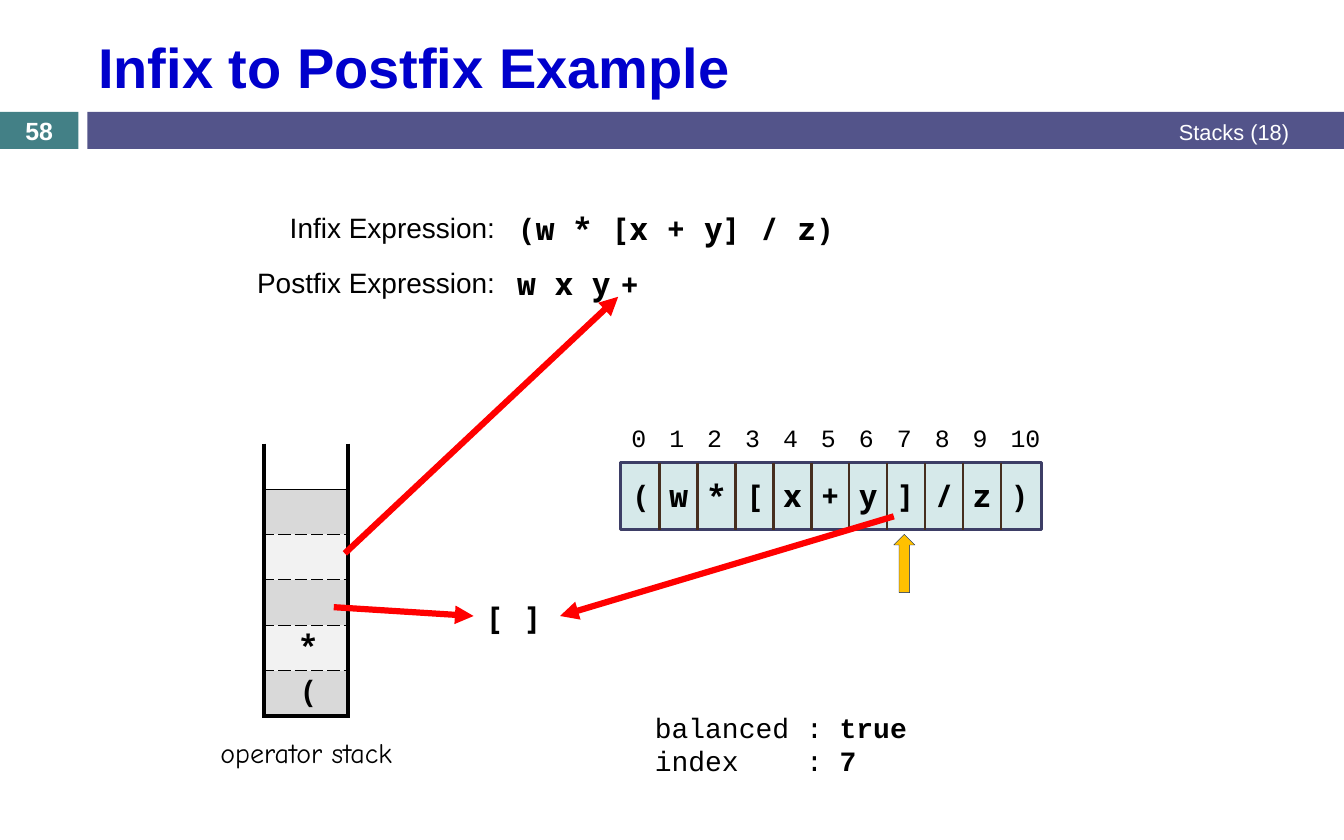
from lxml import etree
from pptx import Presentation
from pptx import util as u
from pptx.dml.color import RGBColor
from pptx.enum import shapes, text
from pptx.oxml import ns

Cm, Pt = u.Cm, u.Pt
COLORS = {
    "title": "0000CC", "bar": "53548A", "number": "438086",
    "white": "FFFFFF", "black": "000000",
    "light": "F2F2F2", "dark": "D9D9D9",
    "array": "D6E9EA", "array_line": "3D3E66", "divider": "462E1F",
    "marker": "FFC000", "marker_line": "002060", "move": "FF0000",
}
SANS, CODE, MONO, HAND = "Arial", "Noto Sans Mono", "Courier New", "Comic Neue"
CHAR_WIDTH, CHAR_HEIGHT = 0.86, 1.12


def rgb(name):
    return RGBColor.from_string(COLORS[name])


def add_xml(parent, tag, **attributes):
    return etree.SubElement(parent, ns.qn(tag), attributes)


def style_run(run, size, font, color="black", bold=False):
    run.font.size, run.font.name, run.font.bold = Pt(size), font, bold
    run.font.color.rgb = rgb(color)


def add_text(slide, box, content, size, font, color="black", bold=False,
             align=text.PP_ALIGN.LEFT, anchor=text.MSO_ANCHOR.TOP):
    shape = slide.shapes.add_textbox(*map(Cm, box))
    frame = shape.text_frame
    frame.word_wrap = True
    frame.vertical_anchor = anchor
    frame.text = content
    for paragraph in frame.paragraphs:
        paragraph.alignment = align
        for run in paragraph.runs:
            style_run(run, size, font, color, bold)
    return shape


def add_char(slide, left, top, char):
    add_text(slide, (left, top, CHAR_WIDTH, CHAR_HEIGHT), char, 20, CODE, bold=True)


def add_block(slide, kind, box, fill, line=None, width=0):
    shape = slide.shapes.add_shape(kind, *map(Cm, box))
    shape.shadow.inherit = False
    shape.fill.solid()
    shape.fill.fore_color.rgb = rgb(fill)
    if line:
        shape.line.color.rgb = rgb(line)
        shape.line.width = Pt(width)
    else:
        shape.line.fill.background()
    return shape


def add_line(slide, start, end, color, width, arrow=False):
    line = slide.shapes.add_connector(
        shapes.MSO_CONNECTOR.STRAIGHT, *map(Cm, (*start, *end)))
    line.line.color.rgb = rgb(color)
    line.line.width = Pt(width)
    if arrow:
        add_xml(line.line._get_or_add_ln(), "a:tailEnd", type="triangle")
    add_xml(line._element.spPr, "a:effectLst")


def set_border(cell, index, side, width, dash="solid"):
    """Draw one cell edge; a width of 0 hides it."""
    border = etree.Element(ns.qn("a:ln" + side), {"w": str(Pt(width))})
    if width:
        fill = add_xml(border, "a:solidFill")
        add_xml(fill, "a:srgbClr", val=COLORS["black"])
        add_xml(border, "a:prstDash", val=dash)
    else:
        add_xml(border, "a:noFill")
    cell._tc.get_or_add_tcPr().insert(index, border)


def add_header(slide, left, top, width, height):
    middle = text.MSO_ANCHOR.MIDDLE
    number_box = (left, top, 1.78, height)
    bar_left = left + 1.98
    rectangle = shapes.MSO_SHAPE.RECTANGLE
    add_block(slide, rectangle, number_box, "number")
    add_block(slide, rectangle, (bar_left, top, width - 1.98, height), "bar")
    add_text(slide, (bar_left, top - 2.06, 27.18, 2.03), "Infix to Postfix Example",
             36, SANS, "title", True, anchor=middle)
    add_text(slide, (left + 11.43, top + 0.03, 18.06, height), "Stacks (18)",
             14, SANS, "white", align=text.PP_ALIGN.RIGHT, anchor=middle)
    add_text(slide, number_box, "58", 16, SANS, "white", True,
             text.PP_ALIGN.CENTER, middle)


def add_expressions(slide, left, top, label_width, value_width):
    rows = [("Infix Expression:", "(w * [x + y] / z)"),
            ("Postfix Expression:", "w x y")]
    value_left = left + label_width
    for row, (label, value) in enumerate(rows):
        y = top + 1.25 * row
        add_text(slide, (left, y, label_width, 1.02), label, 18, SANS,
                 align=text.PP_ALIGN.RIGHT)
        add_text(slide, (value_left, y - 0.03, value_width, CHAR_HEIGHT), value,
                 20, CODE, bold=True)
    # Operator just appended to the postfix expression
    add_char(slide, value_left + 2.34, top + 1.24, "+")


def add_stack(slide, left, top, width, row_height):
    fills = ["white", "dark", "light", "dark", "light", "dark"]
    last = len(fills) - 1
    table = slide.shapes.add_table(
        len(fills), 1, *map(Cm, (left, top, width, row_height * len(fills)))).table
    table.first_row = table.horz_banding = False
    for row, fill in enumerate(fills):
        table.rows[row].height = Cm(row_height)
        cell = table.cell(row, 0)
        cell.margin_top = cell.margin_bottom = 0
        cell.fill.solid()
        cell.fill.fore_color.rgb = rgb(fill)
        set_border(cell, 0, "L", 3)
        set_border(cell, 1, "R", 3)
        set_border(cell, 2, "T", 0.5 if row else 0, "lgDash" if row > 1 else "solid")
        set_border(cell, 3, "B", 3 if row == last else 0.5,
                   "lgDash" if 0 < row < last else "solid")
    for row, char in ((4, "*"), (5, "(")):
        add_char(slide, left + 0.54, top + row_height * row - 0.1, char)
    add_text(slide, (left - 1.24, top + 6.5, 5.13, 1.02), "operator stack", 18, HAND)


def add_array(slide, left, top, width, height, current):
    add_block(slide, shapes.MSO_SHAPE.RECTANGLE, (left, top, width, height),
              "array", "array_line", 1.5)
    for index, char in enumerate("(w*[x+y]/z)"):
        x = left + CHAR_WIDTH * index
        if index:
            add_line(slide, (x + 0.03, top), (x + 0.03, top + height), "divider", 1.5)
        label_width = CHAR_WIDTH if index < 10 else 1.3
        add_text(slide, (x, top - 1.02, label_width, 0.94), str(index), 16, MONO)
        add_char(slide, x, top + 0.2, char)
    # Marker below the current index
    marker_left = left + CHAR_WIDTH * current + 0.18
    add_block(slide, shapes.MSO_SHAPE.UP_ARROW,
              (marker_left, top + height + 0.11, 0.48, 1.32),
              "marker", "marker_line", 0.25)


def add_bracket_match(slide, left, top):
    for column, char in enumerate("[]"):
        add_char(slide, left + 0.89 * column, top, char)


def add_moves(slide):
    moves = [((20.27, 11.71), (12.7, 13.97)),
             ((7.82, 12.55), (14.02, 6.73)),
             ((7.57, 13.77), (10.74, 13.97))]
    for start, end in moves:
        add_line(slide, start, end, "move", 4, arrow=True)


def add_status(slide, left, top, width, height):
    shape = add_text(slide, (left, top, width, height),
                     "balanced\t: \nindex\t: ", 18, MONO)
    for paragraph, value in zip(shape.text_frame.paragraphs, ("true", "7")):
        run = paragraph.add_run()
        run.text = value
        style_run(run, 18, MONO, bold=True)
        # Tab stop lines up the colons
        tabs = add_xml(paragraph._p.get_or_add_pPr(), "a:tabLst")
        add_xml(tabs, "a:tab", pos=str(Cm(3.43)), algn="l")


def main():
    presentation = Presentation()
    presentation.slide_width, presentation.slide_height = Cm(30.48), Cm(19.05)
    slide = presentation.slides.add_slide(presentation.slide_layouts[6])
    add_header(slide, 0, 2.54, 30.48, 0.84)
    add_expressions(slide, 4.88, 4.65, 6.6, 9.1)
    add_stack(slide, 5.99, 10.06, 1.9, 1.03)
    add_array(slide, 14.07, 10.49, 9.55, 1.52, current=7)
    add_bracket_match(slide, 10.74, 13.44)
    add_moves(slide)
    add_status(slide, 14.6, 15.98, 8.26, 1.8)
    presentation.save("out.pptx")


if __name__ == "__main__":
    main()
